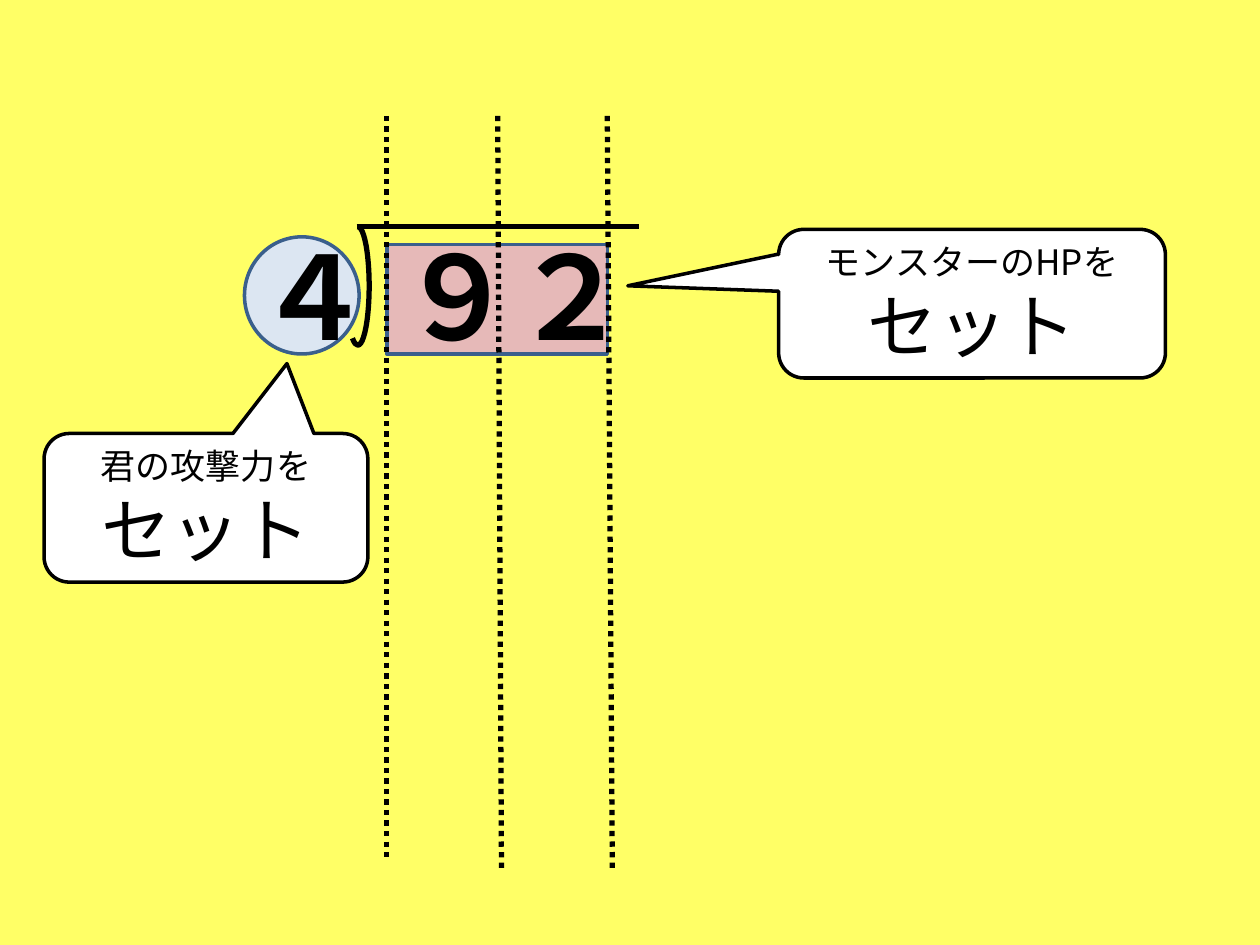
import pptx
import pptx.util
import pptx.dml.color
import pptx.enum.dml
import pptx.enum.shapes
import pptx.enum.text
import pptx.oxml
import pptx.oxml.ns

Inches = pptx.util.Inches
Pt = pptx.util.Pt
RGBColor = pptx.dml.color.RGBColor
SHAPE = pptx.enum.shapes.MSO_SHAPE

YELLOW = RGBColor(0xFF, 0xFF, 0x66)
PINK = RGBColor(0xE6, 0xB9, 0xB8)
PALE_BLUE = RGBColor(0xDC, 0xE6, 0xF2)
EDGE_BLUE = RGBColor(0x3A, 0x5F, 0x8C)
OUTLINE_BLUE = RGBColor(0x05, 0x46, 0x97)
BLACK = RGBColor(0, 0, 0)
WHITE = RGBColor(0xFF, 0xFF, 0xFF)

DIGIT_FONT = "Calibri"
JAPANESE_FONT = "Noto Sans CJK JP"


def add_figure(shapes, kind, left, top, width, height, fill, line, weight=2, adjustments=()):
    figure = shapes.add_shape(kind, Inches(left), Inches(top), Inches(width), Inches(height))
    figure.shadow.inherit = False
    if fill is None:
        figure.fill.background()
    else:
        figure.fill.solid()
        figure.fill.fore_color.rgb = fill
    figure.line.color.rgb = line
    figure.line.width = Pt(weight)
    for index, value in enumerate(adjustments):
        figure.adjustments[index] = value
    return figure


def add_line(shapes, start, end, dotted=False):
    line = shapes.add_connector(pptx.enum.shapes.MSO_CONNECTOR.STRAIGHT,
                                *(Inches(value) for value in start + end))
    line.line.color.rgb = BLACK
    line.line.width = Pt(3)
    if dotted:
        line.line.dash_style = pptx.enum.dml.MSO_LINE.ROUND_DOT
    pptx.oxml.ns.qn("a:effectLst")
    line._element.spPr.append(pptx.oxml.parse_xml(
        "<a:effectLst %s/>" % pptx.oxml.ns.nsdecls("a")))


def add_centred_run(para, text, size, font):
    para.alignment = pptx.enum.text.PP_ALIGN.CENTER
    run = para.add_run()
    run.text = text
    run.font.size = Pt(size)
    run.font.name = font
    run.font.color.rgb = BLACK
    # East Asian characters take their own typeface
    run.font._element.find(pptx.oxml.ns.qn("a:latin")).addnext(pptx.oxml.parse_xml(
        '<a:ea %s typeface="%s"/>' % (pptx.oxml.ns.nsdecls("a"), JAPANESE_FONT)))
    return run


def add_digit(shapes, text, left):
    box = shapes.add_textbox(Inches(left), Inches(1.74), Inches(0.84), Inches(1.21))
    frame = box.text_frame
    frame.word_wrap = False
    frame.auto_size = pptx.enum.text.MSO_AUTO_SIZE.SHAPE_TO_FIT_TEXT
    run = add_centred_run(frame.paragraphs[0], text, 66, DIGIT_FONT)
    run.font.bold = True
    run.font._element.insert(0, pptx.oxml.parse_xml(
        '<a:ln %s w="12700"><a:solidFill><a:srgbClr val="%s"/></a:solidFill></a:ln>'
        % (pptx.oxml.ns.nsdecls("a"), OUTLINE_BLUE)))


def add_callout(shapes, left, top, width, pointer, lines):
    callout = add_figure(shapes, SHAPE.ROUNDED_RECTANGULAR_CALLOUT, left, top, width, 1.18,
                         WHITE, BLACK, adjustments=pointer)
    frame = callout.text_frame
    frame.word_wrap = True
    frame.vertical_anchor = pptx.enum.text.MSO_ANCHOR.MIDDLE
    for index, (text, size) in enumerate(lines):
        para = frame.add_paragraph() if index else frame.paragraphs[0]
        add_centred_run(para, text, size, JAPANESE_FONT)


def main():
    deck = pptx.Presentation()
    deck.slide_width, deck.slide_height = Inches(10), Inches(7.5)
    page = deck.slides.add_slide(deck.slide_layouts[6])
    page.background.fill.solid()
    page.background.fill.fore_color.rgb = YELLOW
    shapes = page.shapes

    # Dividend and divisor backgrounds
    add_figure(shapes, SHAPE.RECTANGLE, 3.07, 1.94, 1.75, 0.87, PINK, EDGE_BLUE)
    add_figure(shapes, SHAPE.OVAL, 1.94, 1.88, 0.91, 0.93, PALE_BLUE, EDGE_BLUE)
    add_digit(shapes, "９", 3.07)

    # Place-value guides
    for top_x, bottom_x, bottom in ((3.95, 3.98, 6.89), (3.07, 3.07, 6.84), (4.82, 4.86, 6.9)):
        add_line(shapes, (top_x, 0.92), (bottom_x, bottom), dotted=True)

    # Long-division bracket
    bracket = shapes.add_group_shape()
    add_line(bracket.shapes, (2.83, 1.8), (5.07, 1.8))
    add_figure(bracket.shapes, SHAPE.ARC, 2.75, 1.8, 0.18, 0.94, None, BLACK, 3, (162, 57.5))

    for text, left in (("２", 3.98), ("４", 1.94)):
        add_digit(shapes, text, left)

    # Explanations
    add_callout(shapes, 0.35, 3.44, 2.57, (0.25, -0.97, 0.17),
                (("君の攻撃力を", 20), ("セット", 40)))
    add_callout(shapes, 6.18, 1.82, 3.07, (-0.89, -0.12, 0.17),
                (("モンスターのHPを", 20), ("セット", 40)))

    deck.save("out.pptx")


if __name__ == "__main__":
    main()
